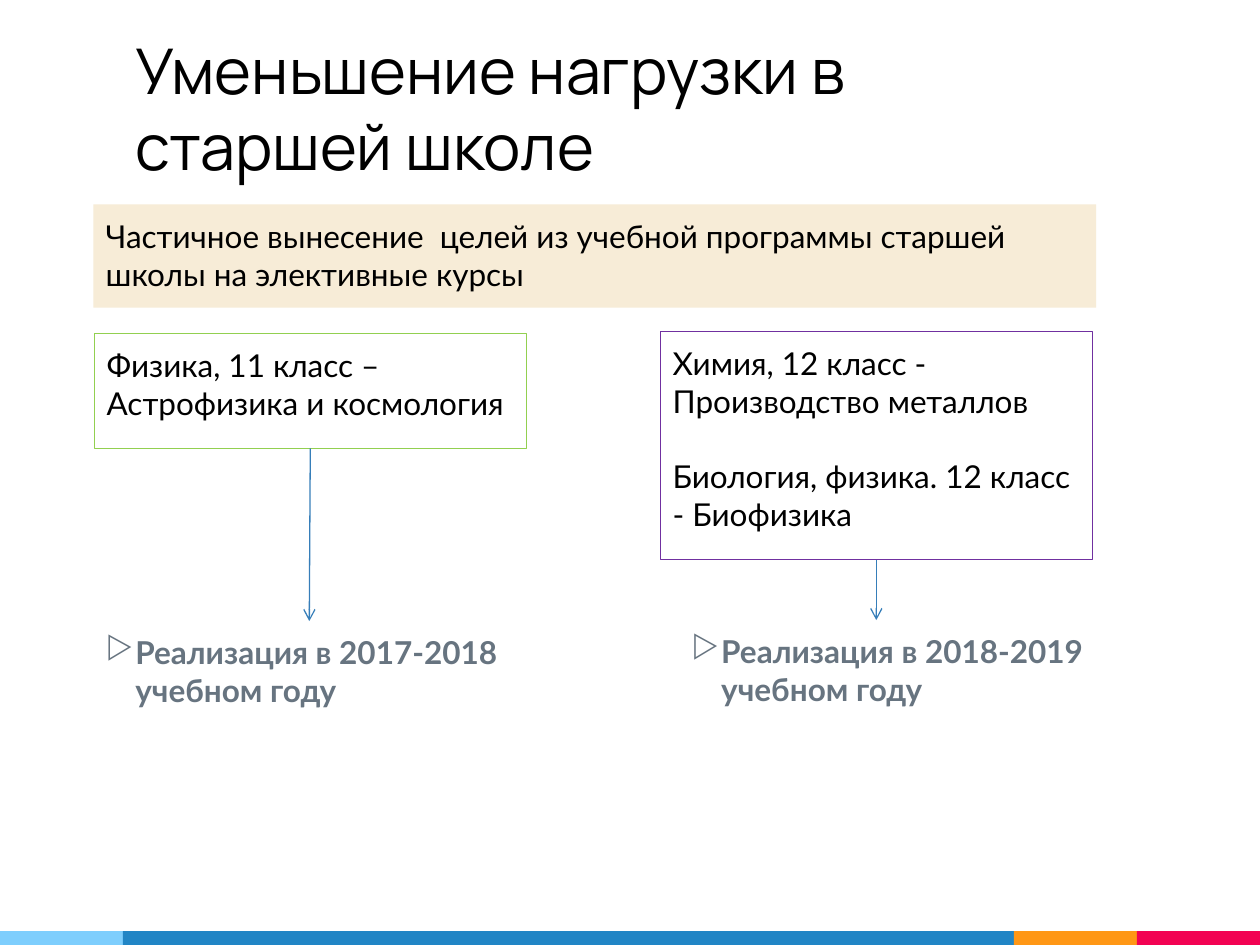
from lxml import etree
from pptx import Presentation, util as u
from pptx.dml.color import RGBColor
from pptx.enum import shapes, text
from pptx.oxml.ns import qn

THEME = {
    "heading_font": "Manrope", "body_font": "Lato",
    "heading_size": 36, "body_size": 18, "line_width": 0.75,
    "ink": "000000", "muted": "677480", "sand": "F7ECD7",
    "green": "92D050", "purple": "7030A0", "arrow": "367EB9",
}
HEADING = "Уменьшение нагрузки в старшей школе"
SUMMARY = "Частичное вынесение  целей из учебной программы старшей школы на элективные курсы"
PHYSICS = ["Физика, 11 класс – Астрофизика и космология"]
SCIENCES = ["Химия, 12 класс -  Производство металлов",
            "Биология, физика. 12 класс - Биофизика"]
SCHEDULES = ["Реализация в 2017-2018 учебном году",
             "Реализация в 2018-2019 учебном году"]
FOOTER = [("7ECEFD", 2.48), ("2185C5", 17.96), ("FF9715", 2.48), ("F20253", 2.48)]

COLUMN_WIDTH = 8.71
COURSE_AREAS = [(1.9, 6.73, COLUMN_WIDTH, 2.31), (13.31, 6.68, COLUMN_WIDTH, 4.6)]
SCHEDULE_AREAS = [(1.88, 12.52, COLUMN_WIDTH, 5.21), (13.69, 12.5, COLUMN_WIDTH, 5.21)]
BULLET_INDENT = 0.6


def color(name):
    return RGBColor.from_string(THEME.get(name, name))


def place(part, area):
    part.left, part.top, part.width, part.height = map(u.Cm, area)


def write(part, lines, role="body", ink="ink", bold=False, anchor=text.MSO_ANCHOR.TOP):
    frame = part.text_frame
    frame.text = "\n".join(lines)
    frame.word_wrap = True
    frame.auto_size = text.MSO_AUTO_SIZE.NONE
    frame.vertical_anchor = anchor
    frame.margin_left = frame.margin_right = u.Cm(0.25)
    frame.margin_top = frame.margin_bottom = u.Cm(0.25)
    for paragraph in frame.paragraphs:
        paragraph.alignment = text.PP_ALIGN.LEFT
        paragraph.space_before = u.Pt(0)
        paragraph.font.name = THEME[role + "_font"]
        paragraph.font.size = u.Pt(THEME[role + "_size"])
        paragraph.font.color.rgb = color(ink)
        paragraph.font.bold = bold
    for paragraph in frame.paragraphs[:-1]:
        paragraph.space_after = u.Pt(THEME[role + "_size"] * 1.2)


def set_bullet(part, mark=None):
    for paragraph in part.text_frame.paragraphs:
        properties = paragraph._p.get_or_add_pPr()
        indent = u.Cm(BULLET_INDENT) if mark else 0
        properties.set("marL", str(indent))
        properties.set("indent", str(-indent))
        following = properties.find(qn("a:defRPr"))
        bullet = etree.Element(qn("a:buChar" if mark else "a:buNone"))
        if mark:
            bullet.set("char", mark)
        if following is None:
            properties.append(bullet)
        else:
            following.addprevious(bullet)


def outline(part, name):
    part.line.color.rgb = color(name)
    part.line.width = u.Pt(THEME["line_width"])


def add_arrow(slide, start, end):
    arrow = slide.shapes.add_connector(
        shapes.MSO_CONNECTOR.STRAIGHT, *map(u.Cm, start + end))
    outline(arrow, "arrow")
    etree.SubElement(arrow.line._get_or_add_ln(), qn("a:tailEnd"), type="arrow")
    etree.SubElement(arrow._element.spPr, qn("a:effectLst"))


def add_footer(slide):
    left = 0
    for fill, width in FOOTER:
        band = slide.shapes.add_shape(shapes.MSO_SHAPE.RECTANGLE, 0, 0, 0, 0)
        place(band, (left, 18.77, width, 0.28))
        band.shadow.inherit = False
        band.fill.solid()
        band.fill.fore_color.rgb = color(fill)
        band.line.fill.background()
        left += width


def main():
    deck = Presentation()
    deck.slide_width, deck.slide_height = u.Cm(25.4), u.Cm(19.05)
    slide = deck.slides.add_slide(deck.slide_layouts.get_by_name("Two Content"))
    heading, summary, physics = slide.placeholders
    add_footer(slide)

    place(heading, (2.48, 0.76, 17.96, 3.18))
    write(heading, [HEADING], "heading", anchor=text.MSO_ANCHOR.BOTTOM)

    place(summary, (1.88, 4.12, 20.22, 2.08))
    summary.fill.solid()
    summary.fill.fore_color.rgb = color("sand")
    write(summary, [SUMMARY])
    set_bullet(summary)

    sciences = slide.shapes.add_textbox(0, 0, 0, 0)
    courses = zip((physics, sciences), (PHYSICS, SCIENCES),
                  ("green", "purple"), COURSE_AREAS)
    for course, lines, border, area in courses:
        place(course, area)
        write(course, lines)
        set_bullet(course)
        outline(course, border)

    for line, area, course_area in zip(SCHEDULES, SCHEDULE_AREAS, COURSE_AREAS):
        schedule = slide.shapes.add_textbox(0, 0, 0, 0)
        place(schedule, area)
        write(schedule, [line], ink="muted", bold=True)
        set_bullet(schedule, "▷")
        left, top, width, height = course_area
        center = left + width / 2
        end_x = min(center, area[0] + width / 2)
        add_arrow(slide, (center, top + height), (end_x, area[1]))

    deck.save("out.pptx")


if __name__ == "__main__":
    main()
